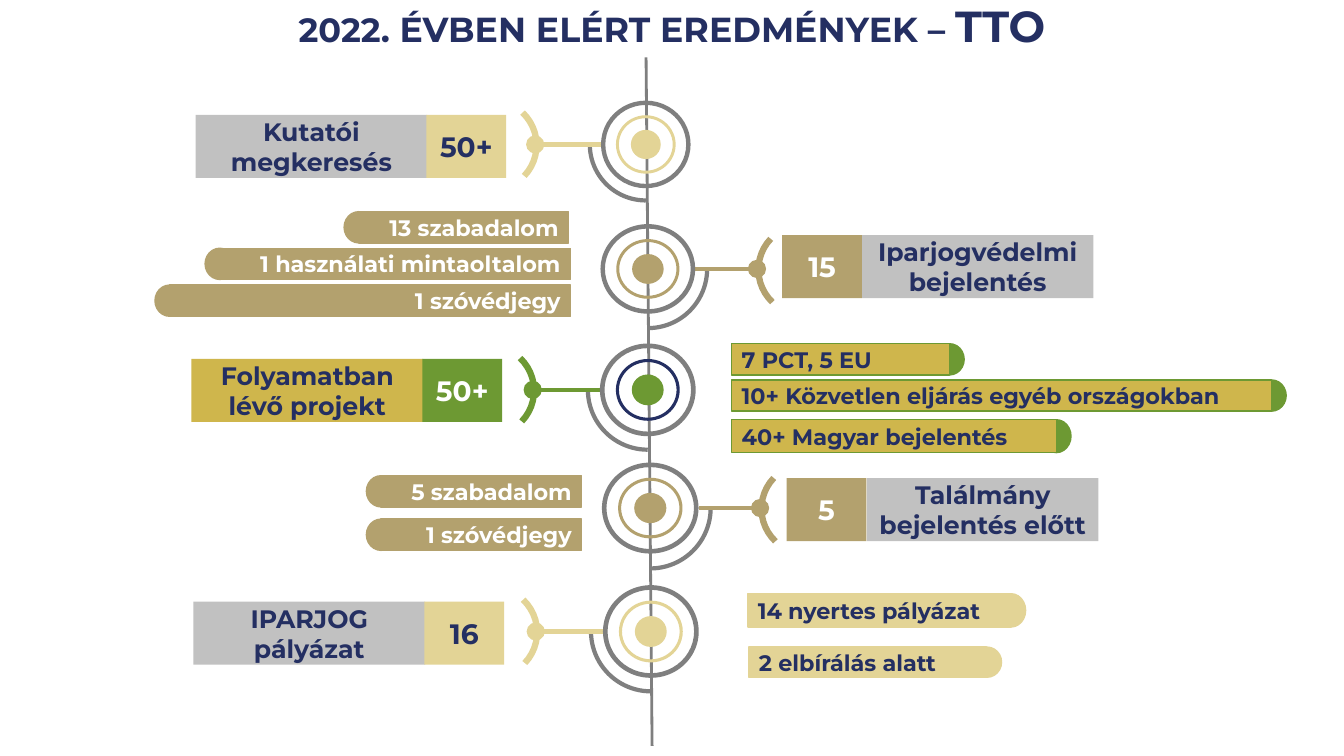
from pptx import Presentation
from pptx.dml.color import RGBColor
from pptx.enum.shapes import MSO_CONNECTOR as CONNECTOR, MSO_SHAPE as SHAPE
from pptx.enum.text import MSO_ANCHOR as ANCHOR, PP_ALIGN as ALIGN
from pptx.oxml.ns import qn
from pptx.util import Pt
from lxml import etree

NAVY = RGBColor(0x24, 0x2F, 0x62)
WHITE = RGBColor(0xFF, 0xFF, 0xFF)
SILVER = RGBColor(0xC1, 0xC1, 0xC1)
GRAY = RGBColor(0x7F, 0x7F, 0x7F)
SAND = RGBColor(0xE3, 0xD4, 0x96)
TAN = RGBColor(0xB3, 0xA1, 0x6E)
GREEN = RGBColor(0x6D, 0x99, 0x33)
GOLD = RGBColor(0xCF, 0xB6, 0x4C)
FONT = "Montserrat"

deck = Presentation()
deck.slide_width, deck.slide_height = Pt(960), Pt(540)
page = deck.slides.add_slide(deck.slide_layouts[6])


def draw(kind, x, y, w, h, fill=None, line=None, weight=1, lines=(),
         size=16, color=NAVY, align=ALIGN.CENTER):
    """Add a preset shape, with one paragraph for each of its lines of text."""
    shape = page.shapes.add_shape(kind, Pt(x), Pt(y), Pt(w), Pt(h))
    shape.shadow.inherit = False
    if fill is None:
        shape.fill.background()
    else:
        shape.fill.solid()
        shape.fill.fore_color.rgb = fill
    if line is None:
        shape.line.fill.background()
    else:
        shape.line.color.rgb = line
        shape.line.width = Pt(weight)
    frame = shape.text_frame
    frame.word_wrap = True
    frame.vertical_anchor = ANCHOR.MIDDLE
    for index, text in enumerate(lines):
        para = frame.add_paragraph() if index else frame.paragraphs[0]
        para.alignment = align
        span = para.add_run()
        span.text = text
        span.font.name, span.font.size, span.font.bold = FONT, Pt(size), True
        span.font.color.rgb = color
    return shape


def draw_line(x1, y1, x2, y2, color, weight):
    line = page.shapes.add_connector(CONNECTOR.STRAIGHT, Pt(x1), Pt(y1), Pt(x2), Pt(y2))
    line.line.color.rgb = color
    line.line.width = Pt(weight)
    etree.SubElement(line._element.spPr, qn("a:effectLst"))


draw_line(465.8, 532.8, 461.5, 41, GRAY, 2)

# Hub centre, width, height; dot centre; accent, ring
hubs = [
    (461.3, 103.2, 64, 62.6, 382.3, SAND, SAND),
    (462.8, 192.1, 67.7, 64, 540.7, TAN, TAN),
    (462.7, 278.5, 68.4, 66.2, 380.5, GREEN, NAVY),
    (464.5, 362.9, 69, 65, 542.9, TAN, TAN),
    (464.9, 451.1, 68.4, 66.2, 382.7, SAND, SAND),
]
for x, y, w, h, dot_x, accent, ring_color in hubs:
    side = 1 if dot_x > x else -1

    sweep = 1.25 * w
    quarter = draw(SHAPE.ARC, x - sweep / 2, y - sweep / 2, sweep, sweep, line=GRAY, weight=3)
    start = 0 if side > 0 else 90
    # Arc angles count 0.6 units per degree
    quarter.adjustments[0] = start * 0.6
    quarter.adjustments[1] = (start + 90) * 0.6

    draw_line(x + side * w / 2, y, dot_x + side * 6, y, accent, 3)
    draw(SHAPE.OVAL, dot_x - 6, y - 6, 12, 12, accent, accent)
    draw(SHAPE.OVAL, x - w / 6, y - h / 6, w / 3, h / 3, accent)
    for scale, color in ((2 / 3, ring_color), (1, GRAY)):
        ring = draw(SHAPE.DONUT, x - w * scale / 2, y - h * scale / 2, w * scale, h * scale, color)
        ring.adjustments[0] = 0.05

    reach = 33 if side > 0 else -31
    bracket = draw(SHAPE.ARC, dot_x + reach - 32, y - 31.5, 64, 64, line=accent, weight=4.5)
    bracket.rotation = 223.5 if side > 0 else 43.5

# Label left, number left, top; label lines, number; label, number and digit colours
results = [
    (139.7, 304.6, 82.1, ["Kutatói", "megkeresés"], "50+", SILVER, SAND, NAVY),
    (615.6, 558.7, 168, ["Iparjogvédelmi", "bejelentés"], "15", SILVER, TAN, WHITE),
    (136.8, 301.7, 256.3, ["Folyamatban lévő projekt"], "50+", GOLD, GREEN, WHITE),
    (619.2, 561.8, 341.5, ["Találmány bejelentés előtt"], "5", SILVER, TAN, WHITE),
    (138.2, 303.1, 429.8, ["IPARJOG pályázat"], "16", SILVER, SAND, NAVY),
]
for label_x, number_x, top, label, number, label_fill, number_fill, digit_color in results:
    draw(SHAPE.RECTANGLE, label_x, top, 165.5, 45, label_fill, lines=label, size=18)
    draw(SHAPE.RECTANGLE, number_x, top, 57, 45, number_fill, lines=[number], size=20,
         color=digit_color)

# Bars with one rounded end: fill, edge, text colour, rounded side, then the bars
bar_groups = [
    (TAN, TAN, WHITE, "left", [
        (256.3, 151.2, 149.8, 22.3, "13 szabadalom"),
        (157, 177.3, 250.6, 22.3, "1 használati mintaoltalom"),
        (121.2, 203.6, 286.4, 22.3, "1 szóvédjegy"),
        (272.2, 339.8, 143.3, 22.3, "5 szabadalom"),
        (272.2, 370.8, 143.3, 22.3, "1 szóvédjegy")]),
    (GOLD, GREEN, NAVY, "right", [
        (522.7, 245.5, 155.5, 22.3, "7 PCT, 5 EU"),
        (522.7, 271.4, 385.5, 22.3, "10+ Közvetlen eljárás egyéb országokban"),
        (522.7, 299.8, 231.8, 23.5, "40+ Magyar bejelentés")]),
    (SAND, SAND, NAVY, "right", [
        (534.2, 424.1, 187.9, 23.8, "14 nyertes pályázat"),
        (535, 462.2, 169.9, 21.6, "2 elbírálás alatt")]),
]
for fill, edge, color, rounded, bars in bar_groups:
    align = ALIGN.RIGHT if rounded == "left" else ALIGN.LEFT
    for x, y, w, h, text in bars:
        end = x if rounded == "left" else x + w
        draw(SHAPE.OVAL, end - 10.5, y, 21, h, edge, edge)
        draw(SHAPE.RECTANGLE, x, y, w, h, fill, edge, lines=[text], color=color, align=align)

title = page.shapes.add_textbox(Pt(0), Pt(0), Pt(960), Pt(39))
title.text_frame.word_wrap = True
para = title.text_frame.paragraphs[0]
para.alignment = ALIGN.CENTER
para.line_spacing = 0.9
for text, size in (("2022", 30), (". évben elért eredmények – TTO", 31)):
    span = para.add_run()
    span.text = text
    span.font.name, span.font.size, span.font.bold = FONT, Pt(size), True
    span.font.color.rgb = NAVY
    span._r.get_or_add_rPr().set("cap", "small")

deck.save("out.pptx")
